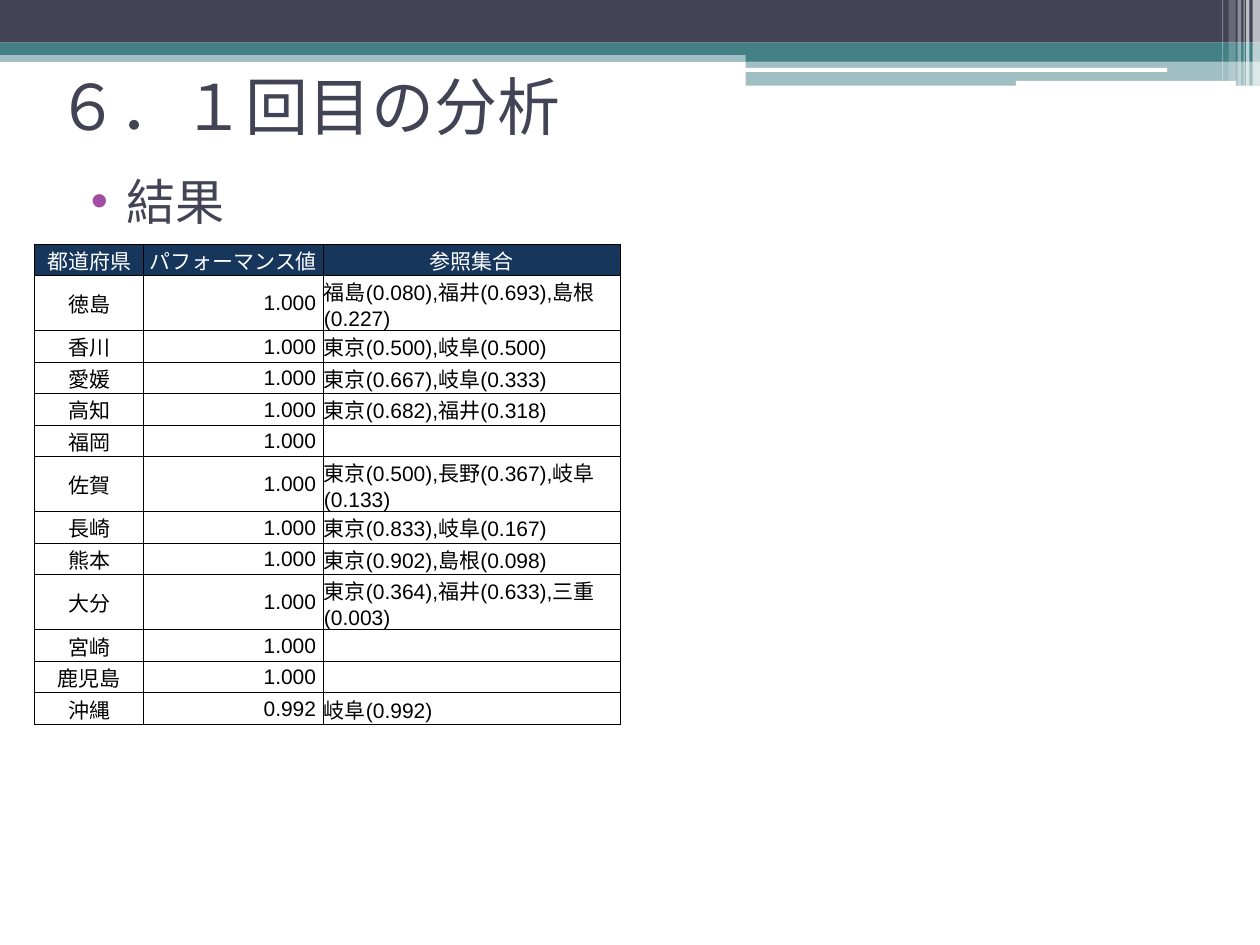
from lxml import etree
from pptx import Presentation
from pptx.dml.color import RGBColor
from pptx.enum.shapes import MSO_SHAPE
from pptx.enum.text import MSO_ANCHOR, MSO_AUTO_SIZE, PP_ALIGN
from pptx.oxml.ns import qn
from pptx.util import Cm, Pt

RECT, ROUND = MSO_SHAPE.RECTANGLE, MSO_SHAPE.ROUNDED_RECTANGLE
LEFT, CENTER, RIGHT = PP_ALIGN.LEFT, PP_ALIGN.CENTER, PP_ALIGN.RIGHT
TOP, MIDDLE = MSO_ANCHOR.TOP, MSO_ANCHOR.MIDDLE
NO_FIT = MSO_AUTO_SIZE.NONE
NAVY, TEAL, WHITE, BLACK = "424456", "438086", "FFFFFF", "000000"
HEADER_BLUE, PURPLE = "16365C", "A04DA3"


def rgb(color):
    return RGBColor.from_string(color)


def write(frame, text, size, font, color, align=LEFT, anchor=MIDDLE):
    """Put one formatted paragraph in the frame and return it."""
    frame.word_wrap = True
    frame.vertical_anchor = anchor
    para = frame.paragraphs[0]
    para.alignment = align
    if text:
        span = para.add_run()
        span.text = text
        span.font.size = Pt(size)
        span.font.name = font
        span.font.color.rgb = rgb(color)
    else:
        etree.SubElement(para._p, qn("a:endParaRPr"), sz=str(size * 100))
    return para


deck = Presentation()
deck.slide_width, deck.slide_height = Cm(25.4), Cm(19.05)
page = deck.slides.add_slide(deck.slide_layouts[1])
title, body = page.placeholders

# Header bands: shape, left, top, width, height, colour, opacity in percent
bands = [
    (RECT, 0, 1.02, 25.4, 0.23, TEAL, 50),
    (RECT, 0, 0, 25.4, 0.86, NAVY, 100),
    (RECT, 0, 0.86, 25.4, 0.25, TEAL, 100),
    (RECT, 15.03, 0.99, 10.37, 0.25, TEAL, 100),
    (RECT, 15.03, 1.23, 10.37, 0.5, TEAL, 50),
    (ROUND, 15.02, 1.37, 8.51, 0.08, WHITE, 100),
    (ROUND, 20.48, 1.63, 4.44, 0.1, WHITE, 100),
]
# Pale stripes at the right end: left, width, height, opacity
stripes = [
    (25.25, 0.15, 1.73, 65),
    (25.12, 0.07, 1.73, 65),
    (25.07, 0.02, 1.73, 60),
    (24.95, 0.07, 1.73, 40),
    (24.77, 0.14, 1.63, 20),
    (24.64, 0.02, 1.63, 30),
]
bands += [(RECT, left, 0, width, height, WHITE, opacity)
          for left, width, height, opacity in stripes]

for kind, left, top, width, height, color, opacity in bands:
    band = page.shapes.add_shape(kind, Cm(left), Cm(top), Cm(width), Cm(height))
    band.shadow.inherit = False
    band.line.fill.background()
    band.fill.solid()
    band.fill.fore_color.rgb = rgb(color)
    if opacity < 100:
        fill_color = band._element.spPr.find(".//" + qn("a:srgbClr"))
        etree.SubElement(fill_color, qn("a:alpha"), val=str(opacity * 1000))

# Title and list stand in front of the bands
for box, left, top, width, height in [
    (title, 0.89, 1.32, 22.86, 1.6),
    (body, 1.27, 3.33, 22.86, 14.94),
]:
    box.left, box.top, box.width, box.height = Cm(left), Cm(top), Cm(width), Cm(height)
    box.text_frame.auto_size = NO_FIT
    page.shapes._spTree.append(box._element)

write(title.text_frame, "６．１回目の分析", 36, "Karla", NAVY)
item = write(body.text_frame, "結果", 28, "Karla", NAVY, anchor=TOP)
item.space_before = Pt(0)
item_format = item._p.get_or_add_pPr()
item_format.set("marL", str(Cm(1.02)))
item_format.set("indent", str(Cm(-0.71)))
bullet_color = etree.SubElement(item_format, qn("a:buClr"))
etree.SubElement(bullet_color, qn("a:srgbClr"), val=PURPLE)
etree.SubElement(item_format, qn("a:buFont"), typeface="Arial")
etree.SubElement(item_format, qn("a:buChar"), char="•")

# Result table
rows = [
    ("都道府県", "パフォーマンス値", "参照集合"),
    ("徳島", "1.000 ", "福島(0.080),福井(0.693),島根(0.227)"),
    ("香川", "1.000 ", "東京(0.500),岐阜(0.500)"),
    ("愛媛", "1.000 ", "東京(0.667),岐阜(0.333)"),
    ("高知", "1.000 ", "東京(0.682),福井(0.318)"),
    ("福岡", "1.000 ", ""),
    ("佐賀", "1.000 ", "東京(0.500),長野(0.367),岐阜(0.133)"),
    ("長崎", "1.000 ", "東京(0.833),岐阜(0.167)"),
    ("熊本", "1.000 ", "東京(0.902),島根(0.098)"),
    ("大分", "1.000 ", "東京(0.364),福井(0.633),三重(0.003)"),
    ("宮崎", "1.000 ", ""),
    ("鹿児島", "1.000 ", ""),
    ("沖縄", "0.992 ", "岐阜(0.992)"),
]
column_widths = [2.2, 3.61, 6]
column_aligns = [CENTER, RIGHT, LEFT]
row_heights = [1.1 if row[2].count(",") == 2 else 0.62 for row in rows]

table = page.shapes.add_table(
    len(rows), len(column_widths), Cm(0.7), Cm(4.92),
    Cm(sum(column_widths)), Cm(sum(row_heights))).table
table.first_row = table.horz_banding = False
for column, width in zip(table.columns, column_widths):
    column.width = Cm(width)

for r, values in enumerate(rows):
    table.rows[r].height = Cm(row_heights[r])
    for c, value in enumerate(values):
        cell = table.cell(r, c)
        cell.margin_left = cell.margin_right = cell.margin_top = Cm(0.02)
        cell.margin_bottom = 0
        cell.vertical_anchor = MIDDLE
        if r == 0:
            cell.fill.solid()
            cell.fill.fore_color.rgb = rgb(HEADER_BLUE)
            write(cell.text_frame, value, 12, "Arial", WHITE, align=CENTER)
        else:
            cell.fill.background()
            write(cell.text_frame, value, 12, "Arial", BLACK, align=column_aligns[c])
        cell_format = cell._tc.get_or_add_tcPr()
        for position, side in enumerate(["lnL", "lnR", "lnT", "lnB"]):
            border = etree.Element(qn("a:" + side), w=str(Pt(0.5)))
            border_fill = etree.SubElement(border, qn("a:solidFill"))
            etree.SubElement(border_fill, qn("a:srgbClr"), val=BLACK)
            cell_format.insert(position, border)

deck.save("out.pptx")
